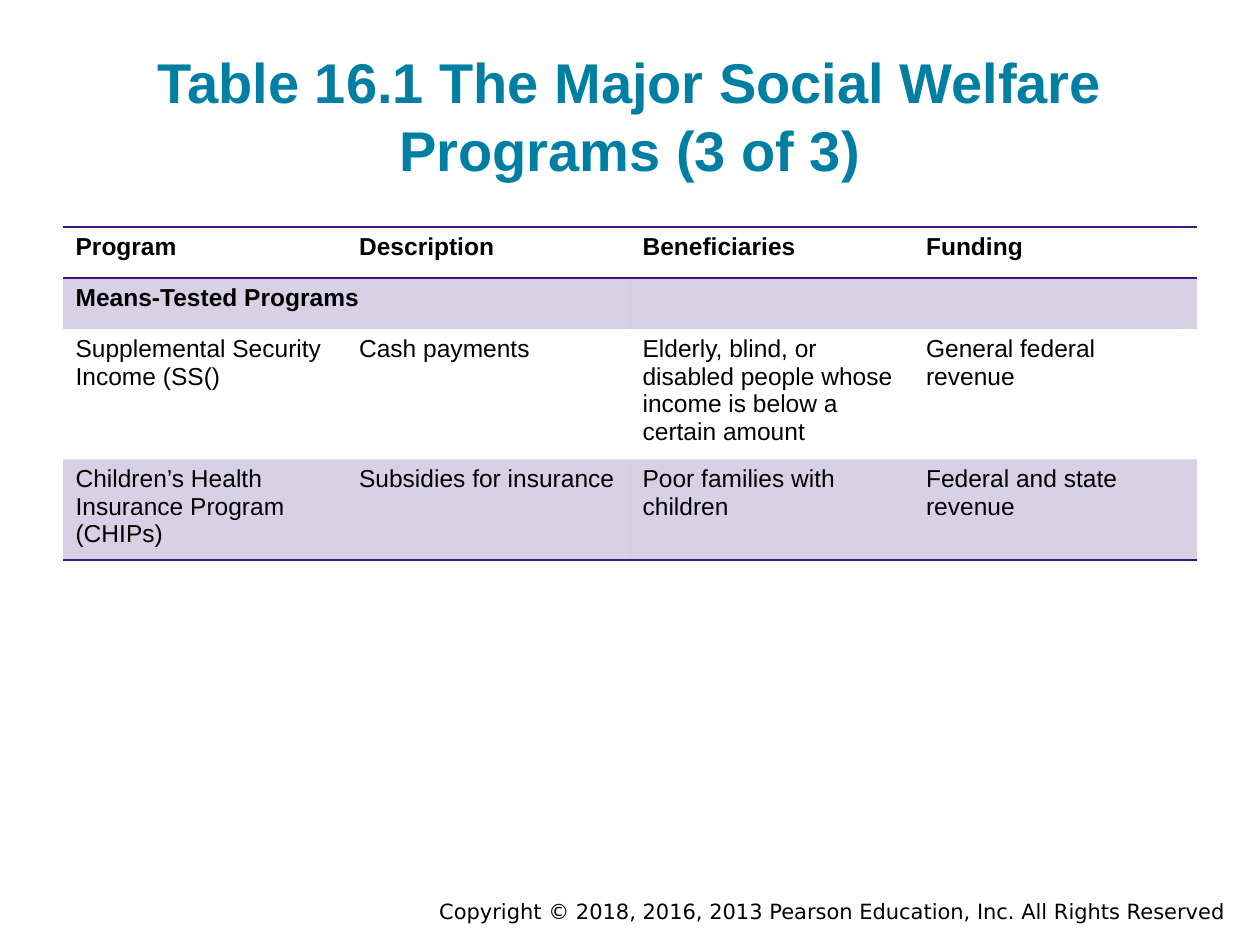
from lxml import etree
from pptx import Presentation
from pptx import util as u
from pptx.dml.color import RGBColor
from pptx.enum import text
from pptx.oxml import ns

SCALE = u.Inches(1) / 126
TEAL = RGBColor(0x00, 0x7F, 0xA3)
PURPLE = RGBColor(0x3C, 0x15, 0x81)
BLACK = RGBColor(0, 0, 0)
PLAIN = "{2D5ABB26-0587-4C30-8999-92F81FD0307C}"
ROWS = [
    ["Program", "Description", "Beneficiaries", "Funding"],
    ["Means-Tested Programs", "", "", ""],
    ["Supplemental Security Income (SS()", "Cash payments",
     "Elderly, blind, or disabled people whose income is below a certain amount",
     "General federal revenue"],
    ["Children’s Health Insurance Program (CHIPs)", "Subsidies for insurance",
     "Poor families with children", "Federal and state revenue"],
]
RULES = {0: ["lnT", "lnB"], 3: ["lnB"]}


def px(*nums):
    return [u.Emu(round(n * SCALE)) for n in nums]


def style(par, size, color=BLACK, bold=False, name="Arial", align=None):
    par.alignment = align
    font = par.font
    font.name, font.size, font.bold = name, u.Pt(size), bold
    font.color.rgb = color


def add_title(slide, words, box):
    title = slide.shapes.title
    title.left, title.top, title.width, title.height = px(*box)
    frame = title.text_frame
    frame.text = words
    frame.auto_size = text.MSO_AUTO_SIZE.NONE
    frame.vertical_anchor = text.MSO_ANCHOR.BOTTOM
    frame.margin_top = frame.margin_bottom = u.Inches(0.1)
    style(frame.paragraphs[0], 32, TEAL, True, align=text.PP_ALIGN.CENTER)


def add_note(slide, words, box):
    frame = slide.shapes.add_textbox(*px(*box)).text_frame
    frame.word_wrap = True
    frame.text = words
    style(frame.paragraphs[0], 12, name="DejaVu Sans", align=text.PP_ALIGN.RIGHT)


def shade(cell):
    cell.fill.solid()
    cell.fill.fore_color.rgb = PURPLE
    color = cell._tc.tcPr.find(".//" + ns.qn("a:srgbClr"))
    etree.SubElement(color, ns.qn("a:alpha"), val="20000")


def rule(cell, sides):
    props = cell._tc.get_or_add_tcPr()
    for spot, side in enumerate(sides):
        line = etree.Element(ns.qn("a:" + side), w=str(u.Pt(1)))
        fill = etree.SubElement(line, ns.qn("a:solidFill"))
        etree.SubElement(fill, ns.qn("a:srgbClr"), val=str(PURPLE))
        props.insert(spot, line)


def add_grid(slide, rows, box):
    shape = slide.shapes.add_table(len(rows), len(rows[0]), *px(*box))
    grid = shape.table
    grid.horz_banding = False
    grid._tbl.tblPr.find(ns.qn("a:tableStyleId")).text = PLAIN
    for r, row in enumerate(rows):
        for c, words in enumerate(row):
            cell = grid.cell(r, c)
            cell.text = words
            style(cell.text_frame.paragraphs[0], 14, bold=r < 2)
            if r % 2:
                shade(cell)
            else:
                cell.fill.background()
            rule(cell, RULES.get(r, []))
    grid.cell(1, 0).merge(grid.cell(1, 1))


def main():
    deck = Presentation()
    deck.slide_width, deck.slide_height = px(1260, 945)
    slide = deck.slides.add_slide(deck.slide_layouts[5])
    add_note(slide, "Copyright © 2018, 2016, 2013 Pearson Education, Inc. All Rights Reserved",
             (252, 892, 986, 38))
    add_title(slide, "Table 16.1 The Major Social Welfare Programs (3 of 3)",
              (63, 38, 1134, 157))
    add_grid(slide, ROWS, (63, 227, 1134, 204))
    deck.save("out.pptx")


if __name__ == "__main__":
    main()
